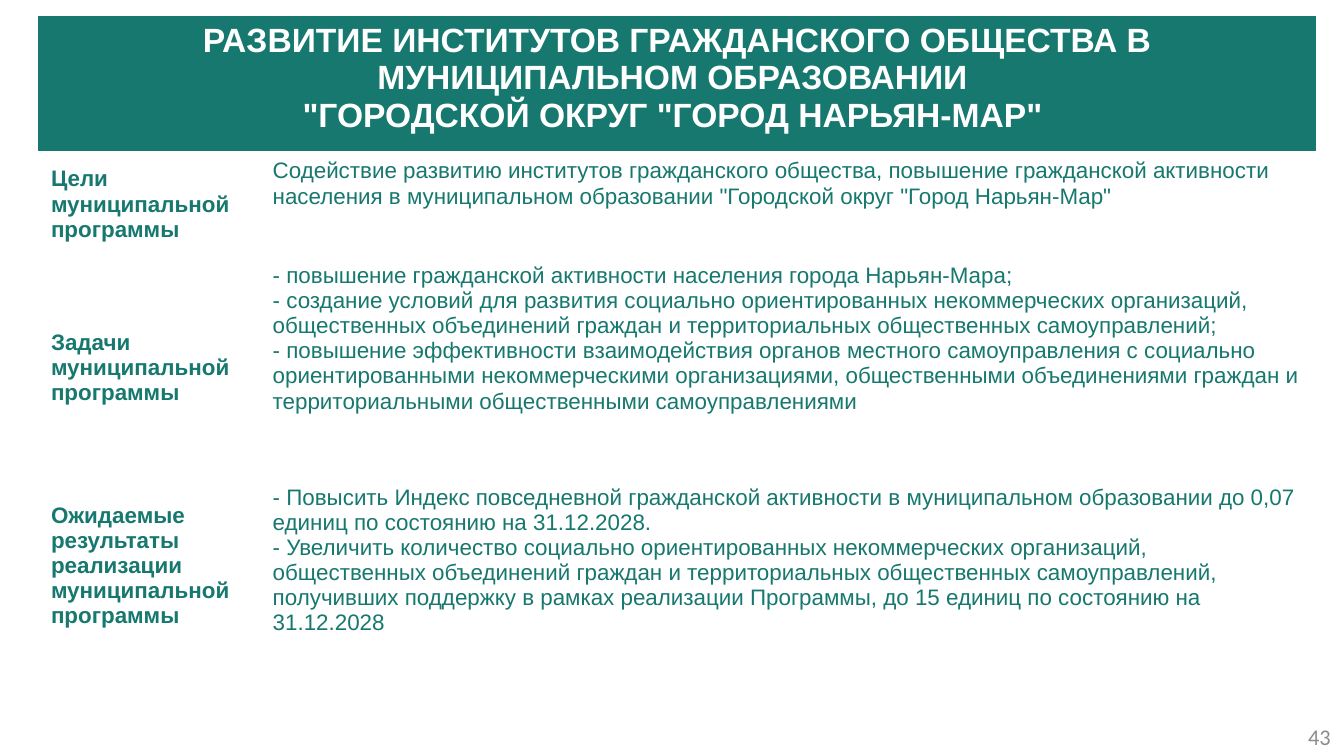
from lxml import etree
from pptx import Presentation
from pptx.dml.color import RGBColor
from pptx.enum.text import MSO_ANCHOR as Anchor, PP_ALIGN as Align
from pptx.oxml.ns import qn
from pptx.util import Cm, Pt

COLORS = {"green": "16786E", "white": "FFFFFF", "grey": "8C8C8C"}

TITLE = [
    "РАЗВИТИЕ ИНСТИТУТОВ ГРАЖДАНСКОГО ОБЩЕСТВА В МУНИЦИПАЛЬНОМ ОБРАЗОВАНИИ ",
    '"ГОРОДСКОЙ ОКРУГ "ГОРОД НАРЬЯН-МАР" ',
]
SECTIONS = [
    ("Цели муниципальной программы", [
        "Содействие развитию институтов гражданского общества, повышение гражданской "
        'активности населения в муниципальном образовании "Городской округ "Город Нарьян-Мар"',
    ]),
    ("Задачи муниципальной программы", [
        "- повышение гражданской активности населения города Нарьян-Мара;",
        "- создание условий для развития социально ориентированных некоммерческих организаций, "
        "общественных объединений граждан и территориальных общественных самоуправлений;",
        "- повышение эффективности взаимодействия органов местного самоуправления с социально "
        "ориентированными некоммерческими организациями, общественными объединениями граждан "
        "и территориальными общественными самоуправлениями",
    ]),
    ("Ожидаемые результаты реализации муниципальной программы", [
        "- Повысить Индекс повседневной гражданской активности в муниципальном образовании "
        "до 0,07 единиц по состоянию на 31.12.2028.",
        "- Увеличить количество социально ориентированных некоммерческих организаций, "
        "общественных объединений граждан и территориальных общественных самоуправлений, "
        "получивших поддержку в рамках реализации Программы, до 15 единиц по состоянию "
        "на 31.12.2028",
    ]),
]
COLUMN_WIDTHS = [4.19, 19.99]
ROW_HEIGHTS = [2.59, 1.98, 4.19, 3.25]


def write_text(text_frame, lines, size, color, bold=False, align=Align.LEFT, font="Arial"):
    text_frame.text = "\n".join(lines)
    for paragraph in text_frame.paragraphs:
        paragraph.alignment = align
        for run in paragraph.runs:
            run.font.name = font
            run.font.size = Pt(size)
            run.font.bold = bold
            run.font.color.rgb = RGBColor.from_string(COLORS[color])


def add_borders(cell, sides, color):
    properties = cell._tc.get_or_add_tcPr()
    for index, side in enumerate(sides):
        line = etree.Element(qn(f"a:ln{side}"), w=str(Pt(1)))
        fill = etree.SubElement(line, qn("a:solidFill"))
        etree.SubElement(fill, qn("a:srgbClr"), val=COLORS[color])
        properties.insert(index, line)


def add_program_table(slide, left, top, width, height):
    shape = slide.shapes.add_table(len(ROW_HEIGHTS), len(COLUMN_WIDTHS), left, top, width, height)
    table = shape.table
    table.first_row = table.horz_banding = False
    for column, column_width in zip(table.columns, COLUMN_WIDTHS):
        column.width = Cm(column_width)
    for row, row_height in zip(table.rows, ROW_HEIGHTS):
        row.height = Cm(row_height)
    for cell in table.iter_cells():
        cell.fill.background()

    title = table.cell(0, 0)
    title.merge(table.cell(0, 1))
    title.fill.solid()
    title.fill.fore_color.rgb = RGBColor.from_string(COLORS["green"])
    write_text(title.text_frame, TITLE, 18, "white", bold=True, align=Align.CENTER)
    for cell in table.rows[0].cells:
        add_borders(cell, "LRT", "white")

    for row, (label, lines) in enumerate(SECTIONS, start=1):
        label_cell = table.cell(row, 0)
        label_cell.vertical_anchor = Anchor.MIDDLE
        write_text(label_cell.text_frame, [label], 12, "green", bold=True)
        write_text(table.cell(row, 1).text_frame, lines, 12, "green")


def add_page_number(slide, left, top, width, height, number):
    text_frame = slide.shapes.add_textbox(left, top, width, height).text_frame
    text_frame.word_wrap = True
    text_frame.vertical_anchor = Anchor.MIDDLE
    write_text(text_frame, [number], 12, "grey", align=Align.RIGHT, font="Calibri")


def main():
    presentation = Presentation()
    presentation.slide_width, presentation.slide_height = Cm(25.4), Cm(14.29)
    slide = presentation.slides.add_slide(presentation.slide_layouts[6])
    add_page_number(slide, Cm(19.48), Cm(13.54), Cm(5.92), Cm(0.76), "43")
    add_program_table(slide, Cm(0.71), Cm(0.28), Cm(sum(COLUMN_WIDTHS)), Cm(sum(ROW_HEIGHTS)))
    presentation.save("out.pptx")


if __name__ == "__main__":
    main()
